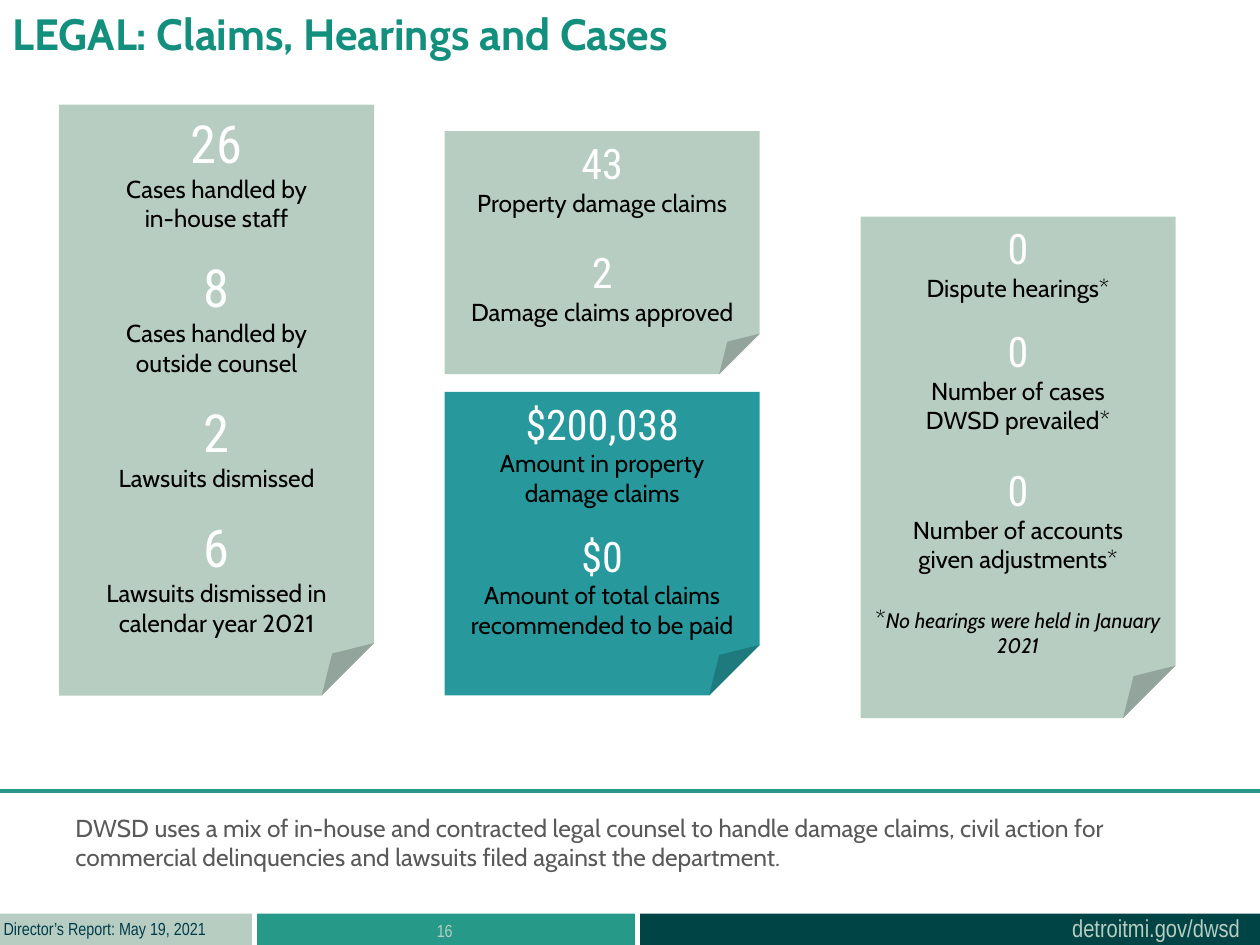
"""Builds the legal claims, hearings and cases slide."""
from dataclasses import dataclass

from lxml import etree
from pptx import Presentation
from pptx import util as u
from pptx.dml.color import RGBColor
from pptx.enum import shapes, text
from pptx.oxml.ns import qn


@dataclass(frozen=True)
class Theme:
    sage: str = "B7CDC2"
    teal: str = "27999D"
    green: str = "279989"
    deep: str = "004445"
    navy: str = "003B49"
    heading: str = "138F7E"
    gray: str = "595959"
    white: str = "FFFFFF"
    black: str = "000000"
    body_font: str = "Cabin"
    number_font: str = "Roboto Condensed"
    footer_font: str = "Arial Narrow"
    title: int = 25
    body: int = 14
    note: int = 12
    footer: int = 10


T = Theme()
WIDTH, HEIGHT = 10, 7.5
NOTE_W = 2.5
NARROW, WIDE = 13, 17

TITLE = "LEGAL: Claims, Hearings and Cases"
SUMMARY = ("DWSD uses a mix of in-house and contracted legal counsel to handle "
           "damage claims, civil action for commercial delinquencies and "
           "lawsuits filed against the department.")
FOOTNOTE = ("*", "No hearings were held in January 2021")

NOTES = [
    dict(left=3.53, top=1.04, height=1.93, fill=T.sage, size=24, stats=[
        ("43", "Property damage claims", 0),
        ("2", "Damage claims approved", WIDE)]),
    dict(left=3.53, top=3.11, height=2.41, fill=T.teal, size=24, stats=[
        ("$200,038", "Amount in property\ndamage claims", 0),
        ("$0", "Amount of total claims recommended to be paid", NARROW)]),
    dict(left=6.83, top=1.72, height=3.98, fill=T.sage, size=24, stats=[
        ("0", "Dispute hearings*", 0),
        ("0", "Number of cases\nDWSD prevailed*", NARROW),
        ("0", "Number of accounts\ngiven adjustments*", WIDE)],
        footnote=FOOTNOTE),
    dict(left=0.47, top=0.83, height=4.69, fill=T.sage, size=30, stats=[
        ("26", "Cases handled by\nin-house staff", 0),
        ("8", "Cases handled by\noutside counsel", NARROW),
        ("2", "Lawsuits dismissed", NARROW),
        ("6", "Lawsuits dismissed in calendar year 2021", NARROW)]),
]

BAR_H, BAR_GAP = 0.25, 0.04
BARS = [(2, T.sage), (3, T.green), (4.92, T.deep)]
LEFT, CENTER, RIGHT = (text.PP_ALIGN.LEFT, text.PP_ALIGN.CENTER,
                       text.PP_ALIGN.RIGHT)
FOOTER = [
    ("detroitmi.gov/dwsd", (8.39, 7.2, 1.55, 0.34), T.body, T.sage, RIGHT, False),
    ("Director’s Report: May 19, 2021", (-0.07, 7.24, 1.88, 0.27), T.footer,
     T.navy, LEFT, False),
    ("16", (2.03, 7.25, 3, 0.25), T.footer, T.sage, CENTER, True),
]


def inches(*lengths):
    return [u.Inches(n) for n in lengths]


def style(r, font, size, color, bold=False, italic=False):
    r.font.name, r.font.size = font, u.Pt(size)
    r.font.bold, r.font.italic = bold, italic
    r.font.color.rgb = RGBColor.from_string(color)


def write(p, content, font, size, color, align=LEFT, before=0, bold=False):
    p.text = content
    p.alignment, p.space_before = align, u.Pt(before)
    for r in p.runs:
        style(r, font, size, color, bold)


def add_filled(s, kind, box, fill):
    sp = s.shapes.add_shape(kind, *inches(*box))
    sp.shadow.inherit = False
    sp.fill.solid()
    sp.fill.fore_color.rgb = RGBColor.from_string(fill)
    sp.line.fill.background()
    return sp


def add_text(s, content, box, font, size, color, align=LEFT, wrap=True):
    tf = s.shapes.add_textbox(*inches(*box)).text_frame
    tf.word_wrap = wrap
    write(tf.paragraphs[0], content, font, size, color, align)


def add_note(s, left, top, height, fill, size, stats, footnote=()):
    sp = add_filled(s, shapes.MSO_SHAPE.FOLDED_CORNER,
                    (left, top, NOTE_W, height), fill)
    tf = sp.text_frame
    tf.word_wrap = True
    tf.vertical_anchor = text.MSO_ANCHOR.TOP
    for i, (number, label, gap) in enumerate(stats):
        p = tf.add_paragraph() if i else tf.paragraphs[0]
        write(p, number, T.number_font, size, T.white, CENTER, gap)
        write(tf.add_paragraph(), label, T.body_font, T.body, T.black, CENTER)
    if footnote:
        mark, remark = footnote
        p = tf.add_paragraph()
        write(p, mark, T.body_font, T.body, T.black, CENTER, WIDE)
        r = p.add_run()
        r.text = remark
        style(r, T.body_font, T.note, T.black, italic=True)


def add_rule(s, y):
    line = s.shapes.add_connector(shapes.MSO_CONNECTOR.STRAIGHT,
                                  *inches(0, y, WIDTH, y))
    line.line.color.rgb = RGBColor.from_string(T.green)
    line.line.width = u.Pt(2.25)
    etree.SubElement(line._element.spPr, qn("a:effectLst"))


def main():
    prs = Presentation()
    prs.slide_width, prs.slide_height = inches(WIDTH, HEIGHT)
    s = prs.slides.add_slide(prs.slide_layouts[5])

    title = s.shapes.title
    title.left, title.top, title.width, title.height = inches(0, 0, 7.59, 0.77)
    title.text_frame.vertical_anchor = text.MSO_ANCHOR.TOP
    write(title.text_frame.paragraphs[0], TITLE, T.body_font, T.title,
          T.heading, bold=True)

    left = 0
    for width, fill in BARS:
        add_filled(s, shapes.MSO_SHAPE.RECTANGLE,
                   (left, HEIGHT - BAR_H, width, BAR_H), fill)
        left += width + BAR_GAP
    for content, box, size, color, align, wrap in FOOTER:
        add_text(s, content, box, T.footer_font, size, color, align, wrap)

    for note in NOTES:
        add_note(s, **note)
    add_text(s, SUMMARY, (0.5, 6.4, 9.02, 0.57), T.body_font, T.body, T.gray)
    add_rule(s, 6.28)
    prs.save("out.pptx")


if __name__ == "__main__":
    main()
